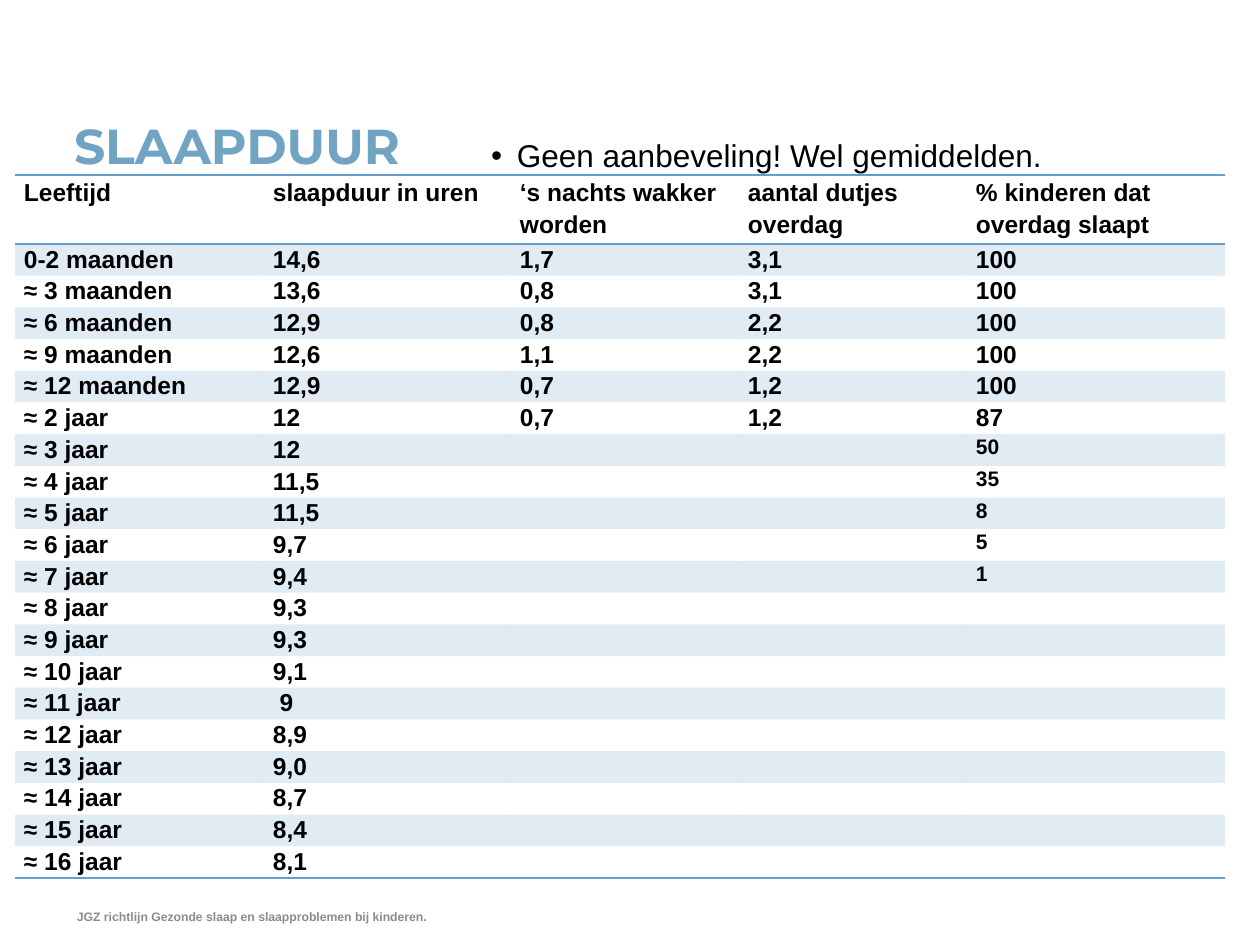
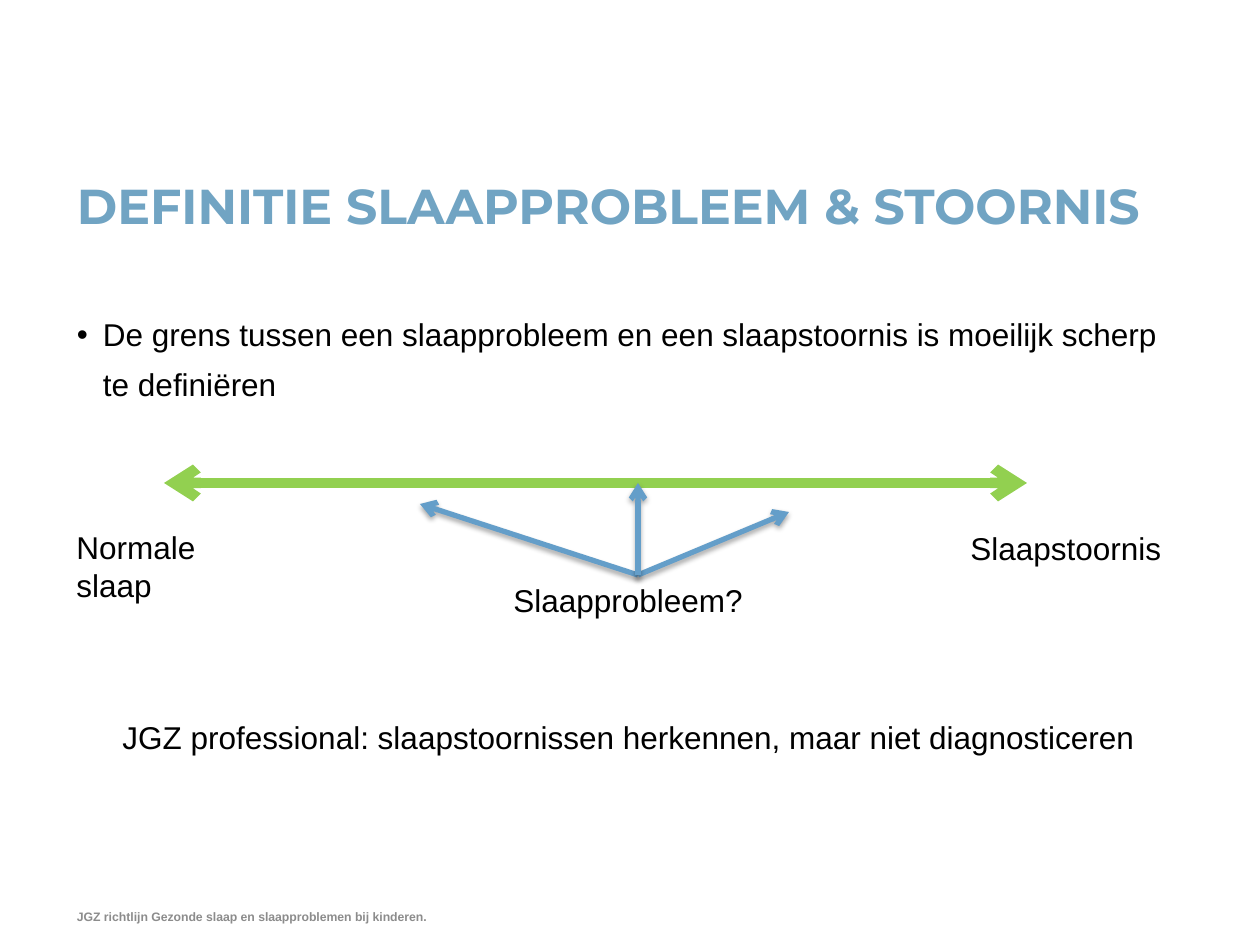
from dataclasses import dataclass

from lxml import etree
from pptx import Presentation
from pptx import util as u
from pptx.dml.color import RGBColor
from pptx.enum import shapes, text
from pptx.oxml import ns


@dataclass(frozen=True)
class Theme:
    """Colours, fonts and type sizes of the deck."""
    heading: str = "71A4C3"
    ink: str = "000000"
    muted: str = "8C8C8C"
    accent: str = "649EC9"
    scale: str = "92D050"
    heading_font: str = "Montserrat"
    body_font: str = "Arial"
    heading_size: int = 28
    body_size: int = 18
    cell_size: int = 14
    small_cell_size: int = 12
    footer_size: int = 7


THEME = Theme()
PX = 914400 / 126
FOOTER = "JGZ richtlijn Gezonde slaap en slaapproblemen bij kinderen."
COLUMN_WIDTHS = (249, 247, 228, 228, 258)
HEADER_HEIGHT, AGES_HEIGHT = 69, 634
HEADER_SPACING, AGE_SPACING = 1.15, 1.07
NO_STYLE = "{2D5ABB26-0587-4C30-8999-92F81FD0307C}"
HEADINGS = ("Leeftijd", "slaapduur in uren", "‘s nachts wakker worden",
            "aantal dutjes overdag", "% kinderen dat overdag slaapt")
SLEEP_BY_AGE = (
    ("0-2 maanden", "14,6", "1,7", "3,1", "100"),
    ("≈ 3 maanden", "13,6", "0,8", "3,1", "100"),
    ("≈ 6 maanden", "12,9", "0,8", "2,2", "100"),
    ("≈ 9 maanden", "12,6", "1,1", "2,2", "100"),
    ("≈ 12 maanden", "12,9", "0,7", "1,2", "100"),
    ("≈ 2 jaar", "12", "0,7", "1,2", "87"),
    ("≈ 3 jaar", "12", "", "", "50"),
    ("≈ 4 jaar", "11,5", "", "", "35"),
    ("≈ 5 jaar", "11,5", "", "", "8"),
    ("≈ 6 jaar", "9,7", "", "", "5"),
    ("≈ 7 jaar", "9,4", "", "", "1"),
    *((f"≈ {age} jaar", hours, "", "", "") for age, hours in enumerate(
        ("9,3", "9,3", "9,1", " 9", "8,9", "9,0", "8,7", "8,4", "8,1"), 8)),
)


def px(length):
    """Turn pixels into EMU."""
    return u.Emu(round(length * PX))


def child(parent, tag, **attributes):
    """Append a DrawingML element to a parent."""
    element = etree.SubElement(parent, ns.qn(f"a:{tag}"))
    for name, value in attributes.items():
        element.set(name, str(value))
    return element


def write(frame, wording, size=THEME.body_size, color=THEME.ink, font=THEME.body_font,
          bold=False, spacing=None, after=0, bullet=False, anchor=text.MSO_ANCHOR.TOP,
          inset=None):
    """Put one formatted paragraph in a text frame."""
    frame.word_wrap = True
    frame.vertical_anchor = anchor
    if inset is not None:
        frame.margin_left = frame.margin_right = px(inset)
        frame.margin_top = frame.margin_bottom = 0
    paragraph = frame.paragraphs[0]
    if bullet:
        properties = paragraph._p.get_or_add_pPr()
        properties.set("marL", str(px(26)))
        properties.set("indent", str(-px(26)))
        child(properties, "buFont", typeface=font)
        child(properties, "buChar", char="•")
    paragraph.alignment = text.PP_ALIGN.LEFT
    paragraph.line_spacing = spacing
    paragraph.space_before = u.Pt(0)
    paragraph.space_after = u.Pt(after)
    if not wording:
        paragraph._p.get_or_add_endParaRPr().set("sz", str(size * 100))
        return
    run = paragraph.add_run()
    run.text = wording
    run.font.size = u.Pt(size)
    run.font.name = font
    run.font.bold = bold
    run.font.color.rgb = RGBColor.from_string(color)


def place(shape, left, top, width, height):
    """Move and size a shape in pixels."""
    shape.left, shape.top = px(left), px(top)
    shape.width, shape.height = px(width), px(height)


def add_label(slide, wording, box, **style):
    """Add a text box."""
    label = slide.shapes.add_textbox(*map(px, box))
    write(label.text_frame, wording, **style)


def add_page(deck, title, title_at, statement, statement_at):
    """Add a slide with its title, bulleted statement and footer."""
    slide = deck.slides.add_slide(deck.slide_layouts[1])
    heading, body = slide.placeholders
    place(heading, *title_at, 1110, 100)
    write(heading.text_frame, title, size=THEME.heading_size, color=THEME.heading,
          font=THEME.heading_font, bold=True, spacing=u.Pt(28), inset=0)
    place(body, *statement_at, 1110, 576)
    write(body.text_frame, statement, spacing=u.Pt(28.1), bullet=True, inset=0)
    add_label(slide, FOOTER, (77, 900, 595, 24), size=THEME.footer_size,
              color=THEME.muted, bold=True, anchor=text.MSO_ANCHOR.BOTTOM, inset=0)
    return slide


def style_cell(cell, shaded, ruled_sides):
    """Set the rules and the tint of a table cell."""
    properties = cell._tc.get_or_add_tcPr()
    for side in ruled_sides:
        rule = child(properties, side, w=u.Pt(1))
        child(child(rule, "solidFill"), "srgbClr", val=THEME.accent)
    if shaded:
        cell.fill.solid()
        cell.fill.fore_color.rgb = RGBColor.from_string(THEME.accent)
        child(properties.find(".//" + ns.qn("a:solidFill"))[0], "alpha", val=20000)
    else:
        cell.fill.background()


def add_sleep_table(slide, left, top):
    """Add the table of average sleep by age."""
    rows = (HEADINGS, *SLEEP_BY_AGE)
    age_height = AGES_HEIGHT / len(SLEEP_BY_AGE)
    table = slide.shapes.add_table(len(rows), len(HEADINGS), px(left), px(top),
                                   px(sum(COLUMN_WIDTHS)),
                                   px(HEADER_HEIGHT + AGES_HEIGHT)).table
    table._tbl.tblPr.find(ns.qn("a:tableStyleId")).text = NO_STYLE
    table.first_row = table.horz_banding = False
    for column, width in zip(table.columns, COLUMN_WIDTHS):
        column.width = px(width)
    last_row = len(rows) - 1
    for r, values in enumerate(rows):
        table.rows[r].height = px(age_height if r else HEADER_HEIGHT)
        sides = {0: ("lnT", "lnB"), last_row: ("lnB",)}.get(r, ())
        for c, value in enumerate(values):
            cell = table.cell(r, c)
            small = c == 4 and r > 6
            cell.margin_left = cell.margin_right = px(9)
            cell.margin_top = cell.margin_bottom = 0
            write(cell.text_frame, value, bold=True, after=10 if r == 0 else 0,
                  spacing=AGE_SPACING if r else HEADER_SPACING,
                  size=THEME.small_cell_size if small else THEME.cell_size)
            style_cell(cell, r % 2 == 1, sides)


def add_arrow(slide, start, end, color, width, both_ends=False, shadow=False):
    """Add a straight arrow, with an optional second head and shadow."""
    arrow = slide.shapes.add_connector(shapes.MSO_CONNECTOR.STRAIGHT,
                                       *map(px, (*start, *end)))
    arrow.line.color.rgb = RGBColor.from_string(color)
    arrow.line.width = u.Pt(width)
    outline = arrow.line._get_or_add_ln()
    if both_ends:
        child(outline, "headEnd", type="arrow")
    child(outline, "tailEnd", type="arrow")
    effects = child(arrow._element.spPr, "effectLst")
    if shadow:
        cast = child(effects, "outerShdw", blurRad=u.Pt(3.1), dist=u.Pt(1.8),
                     dir=90 * 60000, rotWithShape=0)
        child(child(cast, "srgbClr", val=THEME.ink), "alpha", val=35000)


def add_sleep_scale(slide):
    """Draw the scale from normal sleep to sleep disorder."""
    add_arrow(slide, (164, 483), (1027, 483), THEME.scale, 6, both_ends=True)
    for wording, box in (("Normale slaap", (64, 522, 208, 89)),
                         ("Slaapprobleem?", (501, 575, 273, 50)),
                         ("Slaapstoornis", (958, 523, 255, 50))):
        add_label(slide, wording, box)
    for tip in ((420, 504), (789, 512), (638, 483)):
        add_arrow(slide, (638, 575), tip, THEME.accent, 3, shadow=True)


def main():
    """Build and save the deck."""
    deck = Presentation()
    deck.slide_width, deck.slide_height = px(1260), px(945)

    duration = add_page(deck, "SLAAPDUUR", (74, 125),
                        "Geen aanbeveling! Wel gemiddelden.", (491, 125))
    add_sleep_table(duration, 15, 175)

    definition = add_page(
        deck, "DEFINITIE SLAAPPROBLEEM & STOORNIS", (77, 185),
        "De grens tussen een slaapprobleem en een slaapstoornis is moeilijk scherp "
        "te definiëren", (77, 304))
    add_sleep_scale(definition)
    add_label(definition, "JGZ professional: slaapstoornissen herkennen, maar niet "
              "diagnosticeren", (110, 712, 1052, 50))

    deck.save("out.pptx")


if __name__ == "__main__":
    main()
